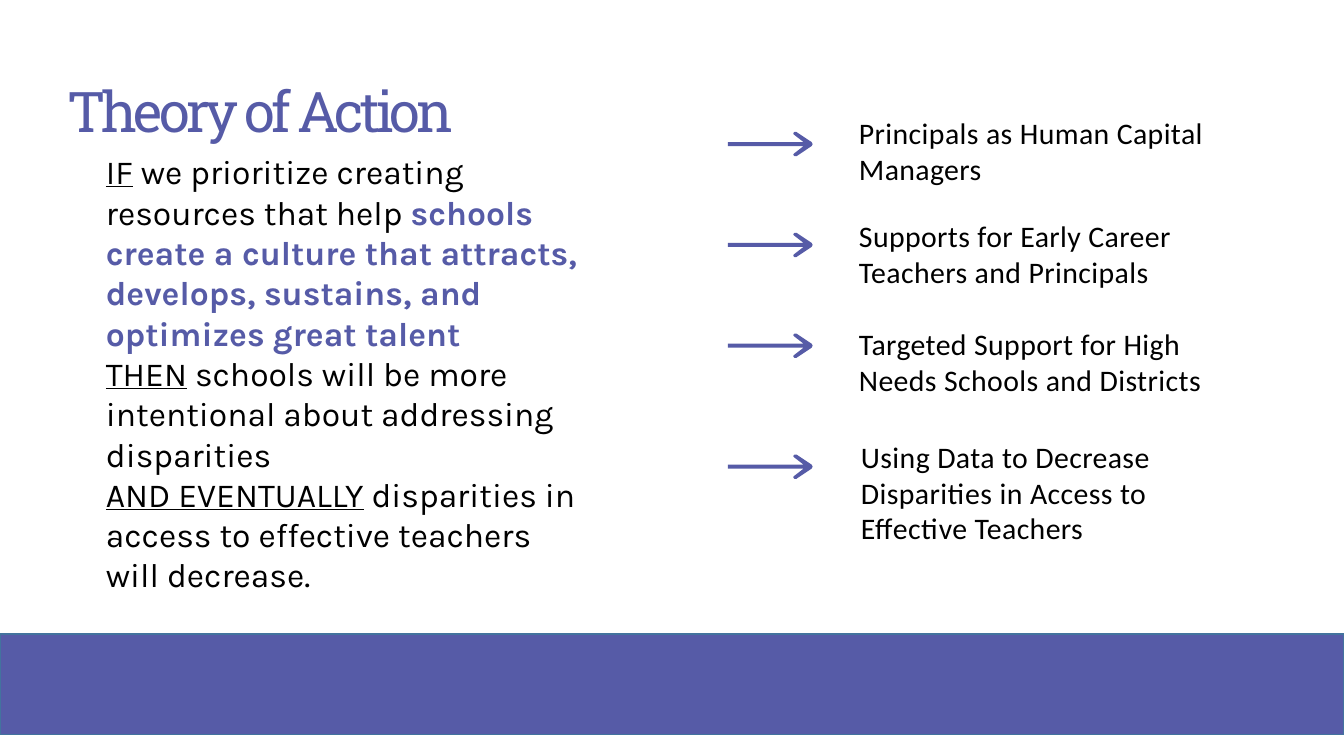
from dataclasses import dataclass

from pptx import Presentation
from pptx import util as u
from pptx.dml.color import RGBColor
from pptx.enum import shapes, text
from pptx.slide import Slide


@dataclass(frozen=True)
class Theme:
    indigo: RGBColor = RGBColor(0x56, 0x5B, 0xA7)
    band_edge: RGBColor = RGBColor(0x43, 0x73, 0x9E)
    black: RGBColor = RGBColor(0, 0, 0)
    title_font: str = "Roboto Slab"
    theory_font: str = "Karla"
    strategy_font: str = "Calibri"
    title_size: float = 40
    theory_size: float = 24
    strategy_size: float = 21.3


@dataclass(frozen=True)
class Phrase:
    words: str
    underline: bool = False
    accent: bool = False


@dataclass(frozen=True)
class Strategy:
    words: str
    left: float
    top: float
    height: float
    arrow_top: float


THEME = Theme()

THEORY = [
    [
        Phrase("IF", underline=True),
        Phrase(" we prioritize creating resources that help "),
        Phrase(
            "schools create a culture that attracts, develops, sustains, "
            "and optimizes great talent",
            accent=True,
        ),
    ],
    [
        Phrase("THEN", underline=True),
        Phrase(" schools will be more intentional about addressing disparities"),
    ],
    [
        Phrase("AND EVENTUALLY", underline=True),
        Phrase(" disparities in access to effective teachers will decrease."),
    ],
]

STRATEGIES = [
    Strategy("Principals as Human Capital Managers", 8.51, 0.94, 0.92, 1.31),
    Strategy("Supports for Early Career Teachers and Principals", 8.51, 1.96, 0.92, 2.31),
    Strategy("Targeted Support for High Needs Schools and Districts", 8.51, 3.03, 0.92, 3.31),
    Strategy(
        "Using Data to Decrease Disparities in Access to Effective Teachers",
        8.53, 4.15, 1.28, 4.51,
    ),
]

ARROW_LEFT = 7.22
ARROW_MIDDLE = 0.12
ARROW_UPPER_EDGE = [
    (0, 0.1), (0.75, 0.1), (0.66, 0.03), (0.65, 0.02), (0.65, 0.01),
    (0.66, 0), (0.68, 0), (0.83, 0.1), (0.84, 0.12),
]


def add_text(
    slide: Slide,
    paragraphs: list[list[Phrase]],
    *,
    left: float,
    top: float,
    width: float,
    height: float,
    inset_top: float,
    font: str,
    size: float,
    color: RGBColor,
    spacing: float = 0,
    anchor: text.MSO_ANCHOR = text.MSO_ANCHOR.TOP,
) -> None:
    frame = slide.shapes.add_textbox(
        u.Inches(left), u.Inches(top), u.Inches(width), u.Inches(height)
    ).text_frame
    frame.word_wrap = True
    frame.vertical_anchor = anchor
    frame.margin_left = u.Inches(0.01)
    frame.margin_right = frame.margin_bottom = 0
    frame.margin_top = u.Inches(inset_top)
    for index, phrases in enumerate(paragraphs):
        paragraph = frame.add_paragraph() if index else frame.paragraphs[0]
        for phrase in phrases:
            run = paragraph.add_run()
            run.text = phrase.words
            run.font.name = font
            run.font.size = u.Pt(size)
            run.font.bold = phrase.accent
            run.font.underline = phrase.underline
            run.font.color.rgb = THEME.indigo if phrase.accent else color
            if spacing:
                run.font._element.set("spc", str(round(spacing * 100)))


def add_band(slide: Slide) -> None:
    band = slide.shapes.add_shape(
        shapes.MSO_SHAPE.RECTANGLE, 0, u.Inches(6.29), u.Inches(13.33), u.Inches(1)
    )
    band.shadow.inherit = False
    band.fill.solid()
    band.fill.fore_color.rgb = THEME.indigo
    band.line.color.rgb = THEME.band_edge
    band.line.width = u.Pt(1)


def add_arrow(slide: Slide, top: float) -> None:
    lower_edge = [(x, 2 * ARROW_MIDDLE - y) for x, y in reversed(ARROW_UPPER_EDGE[:-1])]
    outline = [
        (u.Inches(ARROW_LEFT + x), u.Inches(top + y))
        for x, y in ARROW_UPPER_EDGE + lower_edge
    ]
    builder = slide.shapes.build_freeform(*outline[0])
    builder.add_line_segments(outline[1:], close=True)
    arrow = builder.convert_to_shape()
    arrow.shadow.inherit = False
    arrow.fill.solid()
    arrow.fill.fore_color.rgb = THEME.indigo
    arrow.line.fill.background()


def add_strategy(slide: Slide, strategy: Strategy) -> None:
    add_arrow(slide, strategy.arrow_top)
    add_text(
        slide, [[Phrase(strategy.words)]],
        left=strategy.left, top=strategy.top, width=3.56, height=strategy.height,
        inset_top=0.2, font=THEME.strategy_font, size=THEME.strategy_size,
        color=THEME.black, spacing=0.3,
    )


def main() -> None:
    deck = Presentation()
    deck.slide_width = u.Inches(13.33)
    deck.slide_height = u.Inches(7.5)
    slide = deck.slides.add_slide(deck.slide_layouts[6])

    add_band(slide)
    add_text(
        slide, THEORY,
        left=1.04, top=0.77, width=4.79, height=5.16, inset_top=0.73,
        font=THEME.theory_font, size=THEME.theory_size, color=THEME.black,
    )
    add_text(
        slide, [[Phrase("Theory of Action")]],
        left=0.66, top=0.55, width=12, height=0.88, inset_top=0.2,
        font=THEME.title_font, size=THEME.title_size, color=THEME.indigo,
        spacing=-2.8, anchor=text.MSO_ANCHOR.MIDDLE,
    )
    for strategy in STRATEGIES:
        add_strategy(slide, strategy)

    deck.save("out.pptx")


if __name__ == "__main__":
    main()
